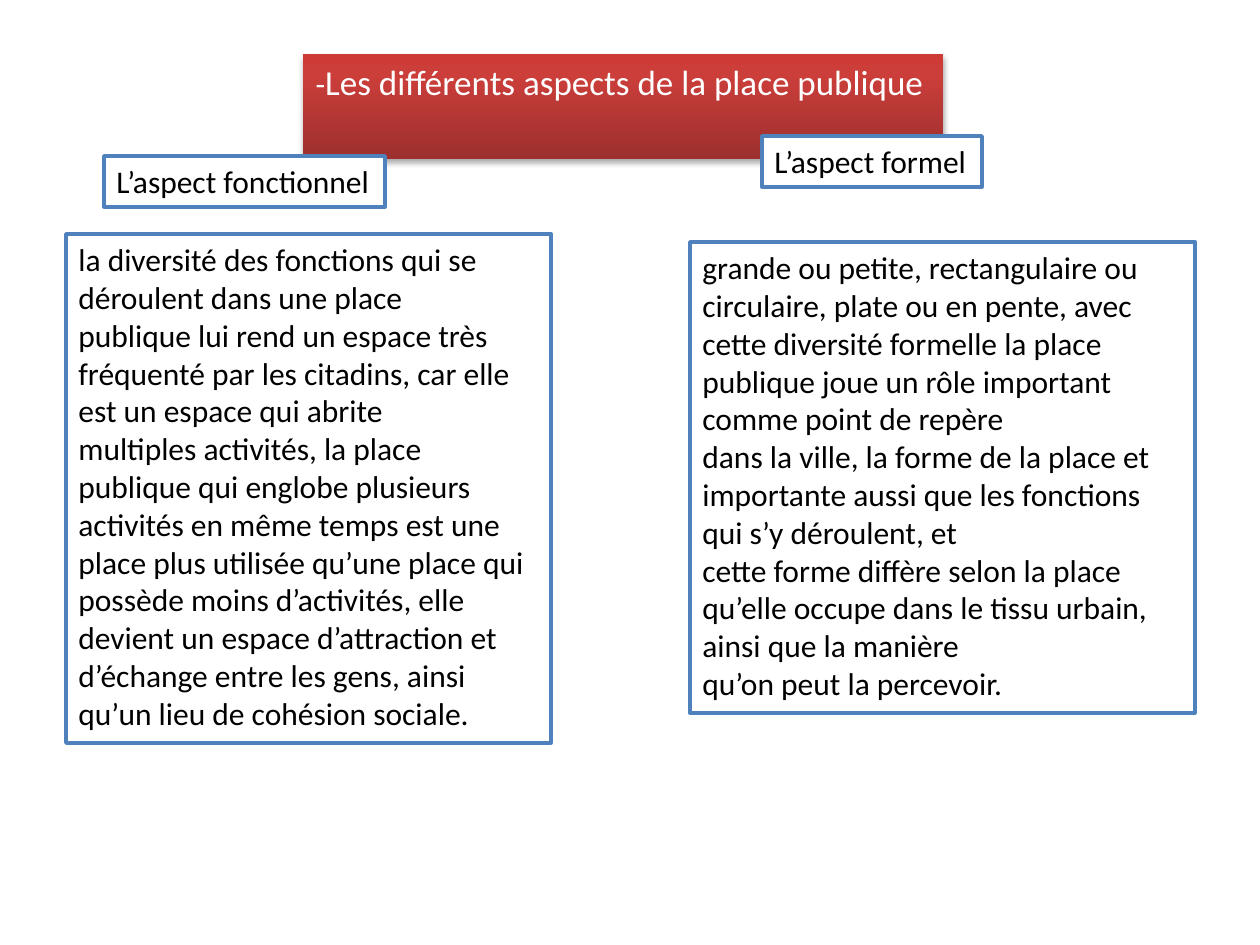
import pptx
import pptx.dml.color
import pptx.enum.shapes
import pptx.enum.text
import pptx.oxml
import pptx.oxml.ns
import pptx.util

EMU_PER_PX = 914400 / 126
BLACK = pptx.dml.color.RGBColor(0x00, 0x00, 0x00)
WHITE = pptx.dml.color.RGBColor(0xFF, 0xFF, 0xFF)
BLUE = pptx.dml.color.RGBColor(0x4F, 0x81, 0xBD)
DARK_RED = pptx.dml.color.RGBColor(0x9C, 0x2F, 0x2D)
RED = pptx.dml.color.RGBColor(0xCB, 0x3E, 0x3A)
BRIGHT_RED = pptx.dml.color.RGBColor(0xCE, 0x3B, 0x37)
BANNER_STOPS = [(0, DARK_RED), (80, RED), (100, BRIGHT_RED)]

FUNCTIONAL = [
    "la diversité des fonctions qui se déroulent dans une place",
    "publique lui rend un espace très fréquenté par les citadins, car elle est un espace qui abrite",
    "multiples activités, la place publique qui englobe plusieurs activités en même temps est une",
    "place plus utilisée qu’une place qui possède moins d’activités, elle devient un espace "
    "d’attraction et d’échange entre les gens, ainsi qu’un lieu de cohésion sociale.",
]
FORMAL = [
    "grande ou petite, rectangulaire ou circulaire, plate ou en pente, avec",
    "cette diversité formelle la place publique joue un rôle important comme point de repère",
    "dans la ville, la forme de la place et importante aussi que les fonctions qui s’y déroulent, et",
    "cette forme diffère selon la place qu’elle occupe dans le tissu urbain, ainsi que la manière",
    "qu’on peut la percevoir.",
]


def px(length):
    return pptx.util.Emu(round(length * EMU_PER_PX))


def set_frame(frame, wrap):
    frame.word_wrap = wrap
    frame.auto_size = pptx.enum.text.MSO_AUTO_SIZE.SHAPE_TO_FIT_TEXT
    frame.vertical_anchor = pptx.enum.text.MSO_ANCHOR.TOP


def add_span(para, text, size, color):
    para.alignment = pptx.enum.text.PP_ALIGN.LEFT
    span = para.add_run()
    span.text = text
    span.font.name = "Calibri"
    span.font.size = pptx.util.Pt(size)
    span.font.color.rgb = color


def add_gradient_and_shadow(shape):
    namespace = pptx.oxml.ns.nsdecls("a")
    stops = "".join(
        f'<a:gs pos="{percent * 1000}"><a:srgbClr val="{color}"/></a:gs>'
        for percent, color in BANNER_STOPS
    )
    gradient = (
        f'<a:gradFill {namespace} rotWithShape="1"><a:gsLst>{stops}</a:gsLst>'
        '<a:lin ang="16200000" scaled="0"/></a:gradFill>'
    )
    shadow = (
        f'<a:effectLst {namespace}><a:outerShdw blurRad="40000" dist="23000" dir="5400000" '
        'rotWithShape="0"><a:srgbClr val="000000"><a:alpha val="35000"/></a:srgbClr>'
        "</a:outerShdw></a:effectLst>"
    )
    for markup in (gradient, shadow):
        shape._element.spPr.append(pptx.oxml.parse_xml(markup))


def place_title(page, left, top, width, height):
    title = page.shapes.title
    title.left, title.top, title.width, title.height = map(px, (left, top, width, height))
    add_gradient_and_shadow(title)
    set_frame(title.text_frame, wrap=False)
    para = title.text_frame.paragraphs[0]
    add_span(para, "-", 18, WHITE)
    add_span(para, "Les différents aspects de la place publique", 20, WHITE)


def add_framed_text(page, paragraphs, left, top, width, height, wrap=True):
    box = page.shapes.add_shape(
        pptx.enum.shapes.MSO_SHAPE.RECTANGLE, *map(px, (left, top, width, height))
    )
    box.shadow.inherit = False
    box.fill.solid()
    box.fill.fore_color.rgb = WHITE
    box.line.color.rgb = BLUE
    box.line.width = pptx.util.Pt(2)
    frame = box.text_frame
    set_frame(frame, wrap)
    for index, text in enumerate(paragraphs):
        para = frame.add_paragraph() if index else frame.paragraphs[0]
        add_span(para, text, 18, BLACK)


def add_aspect(page, left, top, heading, heading_box, body, body_box):
    """Place a heading and its body; both boxes are offsets from left and top."""
    for paragraphs, (x, y, width, height), wrap in (
        ([heading], heading_box, False),
        (body, body_box, True),
    ):
        add_framed_text(page, paragraphs, left + x, top + y, width, height, wrap)


def main():
    deck = pptx.Presentation()
    deck.slide_width, deck.slide_height = px(1260), px(945)
    page = deck.slides.add_slide(deck.slide_layouts[5])
    place_title(page, 303, 54, 640, 56)
    add_aspect(page, 66, 156, "L’aspect fonctionnel", (38, 0, 281, 51),
               FUNCTIONAL, (0, 78, 485, 509))
    add_aspect(page, 690, 136, "L’aspect formel", (72, 0, 220, 51),
               FORMAL, (0, 106, 505, 471))
    deck.save("out.pptx")


if __name__ == "__main__":
    main()
